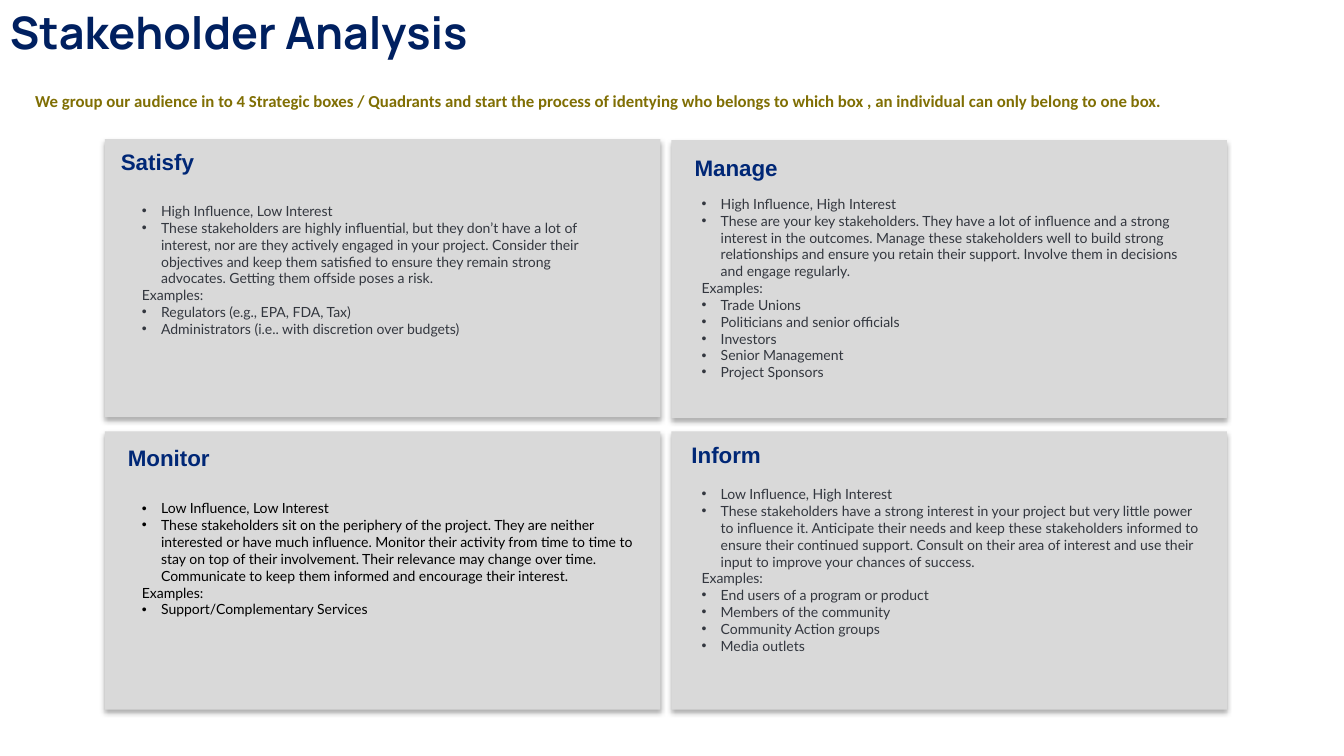
"""Build the Stakeholder Analysis slide: four quadrants of influence and interest."""
import pptx
import pptx.dml.color
import pptx.enum.shapes
import pptx.enum.text
import pptx.oxml
import pptx.oxml.ns
import pptx.util
from pptx.util import Inches

TITLE = "Stakeholder Analysis"
INTRO = ("We group our audience in to 4 Strategic boxes / Quadrants and start the process of identying "
         "who belongs to which box , an individual can only belong to one box.")
EXAMPLES = "Examples:"
NAVY, OLIVE, BLUE, GREY, SLATE, BLACK = "002060", "806F04", "002776", "D9D9D9", "33373F", "000000"
PANEL_SIZE = (5.51, 2.76)
HEADING_SIZE = (2.54, 0.38)
INDENT = 0.19

QUADRANTS = [
    {"name": "Satisfy", "panel": (1.04, 1.38), "heading": (1.1, 1.42),
     "body": (1.31, 1.96, 4.67, 1.62), "color": SLATE,
     "traits": ["High Influence, Low Interest",
                "These stakeholders are highly influential, but they don’t have a lot of interest, nor are "
                "they actively engaged in your project. Consider their objectives and keep them satisfied "
                "to ensure they remain strong advocates. Getting them offside poses a risk."],
     "examples": ["Regulators (e.g., EPA, FDA, Tax)",
                  "Administrators (i.e.. with discretion over budgets)"]},
    {"name": "Manage", "panel": (6.66, 1.39), "heading": (6.79, 1.48),
     "body": (6.86, 1.89, 5.15, 2.12), "color": SLATE,
     "traits": ["High Influence, High Interest",
                "These are your key stakeholders. They have a lot of influence and a strong interest in the "
                "outcomes. Manage these stakeholders well to build strong relationships and ensure you "
                "retain their support. Involve them in decisions and engage regularly."],
     "examples": ["Trade Unions", "Politicians and senior officials", "Investors",
                  "Senior Management", "Project Sponsors"]},
    {"name": "Monitor", "panel": (1.04, 4.28), "heading": (1.17, 4.36),
     "body": (1.31, 4.91, 5.14, 1.45), "color": BLACK,
     "traits": ["Low Influence, Low Interest",
                "These stakeholders sit on the periphery of the project. They are neither interested or "
                "have much influence. Monitor their activity from time to time to stay on top of their "
                "involvement. Their relevance may change over time. Communicate to keep them informed and "
                "encourage their interest."],
     "examples": ["Support/Complementary Services"]},
    {"name": "Inform", "panel": (6.66, 4.28), "heading": (6.76, 4.33),
     "body": (6.86, 4.77, 5.17, 1.95), "color": SLATE,
     "traits": ["Low Influence, High Interest",
                "These stakeholders have a strong interest in your project but very little power to "
                "influence it. Anticipate their needs and keep these stakeholders informed to ensure their "
                "continued support. Consult on their area of interest and use their input to improve your "
                "chances of success."],
     "examples": ["End users of a program or product", "Members of the community",
                  "Community Action groups", "Media outlets"]},
]


def rgb(value):
    return pptx.dml.color.RGBColor.from_string(value)


def add_bullet(paragraph):
    properties = paragraph._p.get_or_add_pPr()
    properties.set("marL", str(Inches(INDENT)))
    properties.set("indent", str(-Inches(INDENT)))
    ns = pptx.oxml.ns.nsdecls("a")
    properties.append(pptx.oxml.parse_xml(f'<a:buFont {ns} typeface="Arial"/>'))
    properties.append(pptx.oxml.parse_xml(f'<a:buChar {ns} char="•"/>'))


def add_text(slide, box, lines, size, font, color, bold=False):
    frame = slide.shapes.add_textbox(*map(Inches, box)).text_frame
    frame.word_wrap = True
    frame.auto_size = pptx.enum.text.MSO_AUTO_SIZE.SHAPE_TO_FIT_TEXT
    for number, (line, bulleted) in enumerate(lines):
        paragraph = frame.add_paragraph() if number else frame.paragraphs[0]
        paragraph.text = line
        if bulleted:
            add_bullet(paragraph)
        paragraph.font.size = pptx.util.Pt(size)
        paragraph.font.name = font
        paragraph.font.bold = bold
        paragraph.font.color.rgb = rgb(color)


def add_panel(slide, corner):
    panel = slide.shapes.add_shape(pptx.enum.shapes.MSO_SHAPE.RECTANGLE,
                                   *map(Inches, corner + PANEL_SIZE))
    panel.fill.solid()
    panel.fill.fore_color.rgb = rgb(GREY)
    panel.line.fill.background()
    panel.shadow.inherit = False
    blur, distance = pptx.util.Pt(3.5), pptx.util.Pt(2.2)
    panel._element.spPr.find(pptx.oxml.ns.qn("a:effectLst")).append(pptx.oxml.parse_xml(
        f'<a:outerShdw {pptx.oxml.ns.nsdecls("a")} blurRad="{blur}" dist="{distance}" dir="5400000" '
        f'rotWithShape="0"><a:srgbClr val="{BLACK}"><a:alpha val="32000"/></a:srgbClr></a:outerShdw>'))


def main():
    deck = pptx.Presentation()
    deck.slide_width, deck.slide_height = Inches(13.33), Inches(7.5)
    slide = deck.slides.add_slide(deck.slide_layouts[6])
    add_text(slide, (0, 0, 8.61, 0.64), [(TITLE, False)], 32, "Manrope", NAVY, True)
    add_text(slide, (0.25, 0.85, 12.83, 0.3), [(INTRO, False)], 12, "Calibri", OLIVE, True)
    for quadrant in QUADRANTS:
        add_panel(slide, quadrant["panel"])
        add_text(slide, quadrant["heading"] + HEADING_SIZE, [(quadrant["name"], False)],
                 16, "Arial", BLUE, True)
        lines = [(trait, True) for trait in quadrant["traits"]]
        lines += [(EXAMPLES, False)] + [(example, True) for example in quadrant["examples"]]
        add_text(slide, quadrant["body"], lines, 10, "Lato", quadrant["color"])
    deck.save("out.pptx")


if __name__ == "__main__":
    main()
